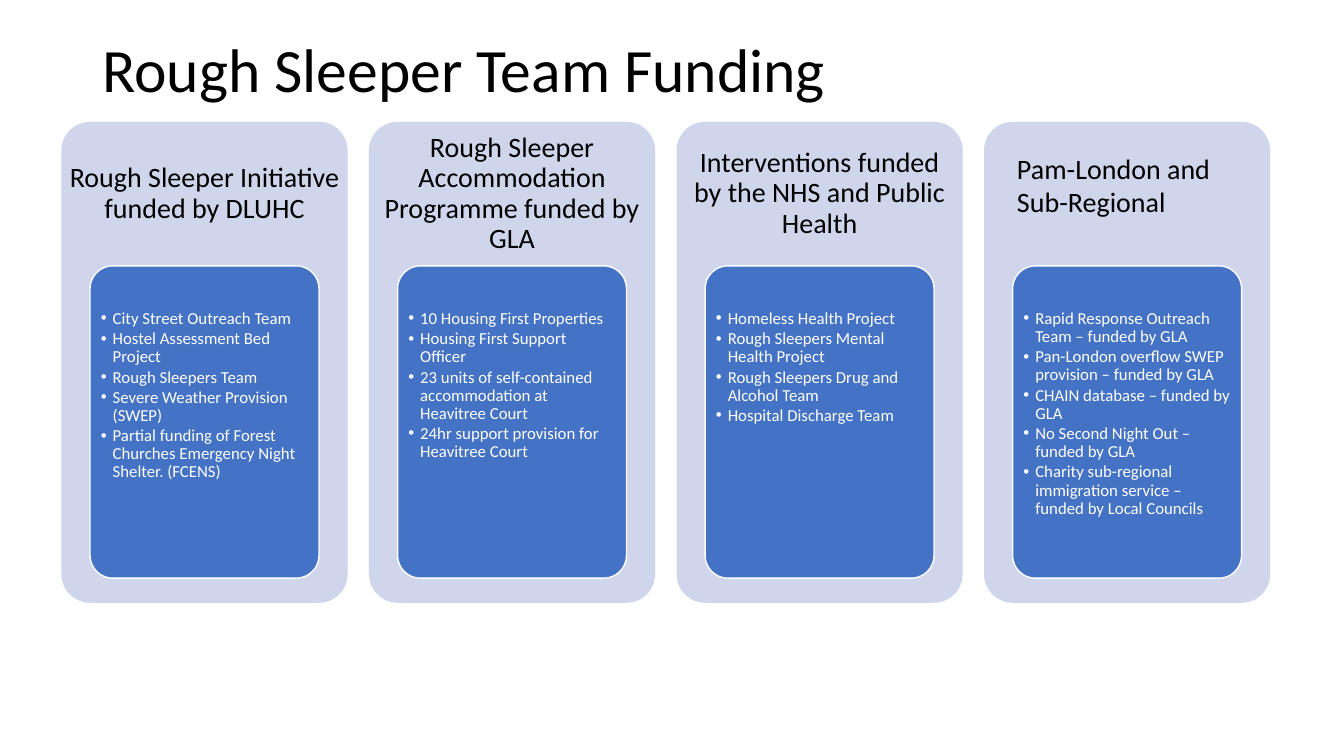
from lxml import etree
from pptx import Presentation
from pptx.dml.color import RGBColor
from pptx.enum.shapes import MSO_SHAPE
from pptx.enum.text import MSO_ANCHOR, MSO_AUTO_SIZE, PP_ALIGN
from pptx.oxml.ns import qn
from pptx.util import Cm, Pt

ROUNDED = MSO_SHAPE.ROUNDED_RECTANGLE
TOP, MIDDLE = MSO_ANCHOR.TOP, MSO_ANCHOR.MIDDLE
LEFT, CENTER = PP_ALIGN.LEFT, PP_ALIGN.CENTER
NO_FIT = MSO_AUTO_SIZE.NONE

COLORS = {"panel": "CFD5EA", "card": "4472C4", "white": "FFFFFF", "black": "000000"}
FONT = "Calibri"
COMPARISON_LAYOUT = 4

COLUMNS = [
    ("Rough Sleeper Initiative funded by DLUHC", [
        "City Street Outreach Team",
        "Hostel Assessment Bed Project",
        "Rough Sleepers Team",
        "Severe Weather Provision (SWEP)",
        "Partial funding of Forest Churches Emergency Night Shelter. (FCENS)",
    ]),
    ("Rough Sleeper Accommodation Programme funded by GLA", [
        "10 Housing First Properties",
        "Housing First Support Officer",
        "23 units of self-contained accommodation at Heavitree Court",
        "24hr support provision for Heavitree Court",
    ]),
    ("Interventions funded by the NHS and Public Health", [
        "Homeless Health Project",
        "Rough Sleepers Mental Health Project",
        "Rough Sleepers Drug and Alcohol Team",
        "Hospital Discharge Team",
    ]),
    ("Pam-London and Sub-Regional", [
        "Rapid Response Outreach Team – funded by GLA",
        "Pan-London overflow SWEP provision – funded by GLA",
        "CHAIN database – funded by GLA",
        "No Second Night Out – funded by GLA",
        "Charity sub-regional immigration service – funded by Local Councils",
    ]),
]


def rgb(name):
    return RGBColor.from_string(COLORS[name])


def place(sp, x, y, w, h):
    sp.left, sp.top, sp.width, sp.height = Cm(x), Cm(y), Cm(w), Cm(h)


def set_frame(tf, anchor, insets):
    tf.word_wrap = True
    tf.auto_size = NO_FIT
    tf.vertical_anchor = anchor
    tf.margin_left, tf.margin_top, tf.margin_right, tf.margin_bottom = map(Cm, insets)


def write(p, text, size, color, align=LEFT, spacing=0.9, after=0):
    p.alignment = align
    p.line_spacing = spacing
    p.space_before = Pt(0)
    p.space_after = Pt(after)
    r = p.add_run()
    r.text = text
    r.font.name = FONT
    r.font.size = Pt(size)
    r.font.bold = False
    r.font.color.rgb = rgb(color)


def add_bullet(p):
    pPr = p._p.get_or_add_pPr()
    pPr.set("marL", str(Cm(0.3)))
    pPr.set("indent", str(-Cm(0.3)))
    etree.SubElement(pPr, qn("a:buFont")).set("typeface", "Arial")
    etree.SubElement(pPr, qn("a:buChar")).set("char", "•")


def add_rounded(slide, x, y, w, h, fill):
    sp = slide.shapes.add_shape(ROUNDED, Cm(x), Cm(y), Cm(w), Cm(h))
    sp.adjustments[0] = 0.1
    sp.shadow.inherit = False
    sp.fill.solid()
    sp.fill.fore_color.rgb = rgb(fill)
    sp.line.fill.background()
    return sp


def fill_title(title, x, y, w, h):
    place(title, x, y, w, h)
    set_frame(title.text_frame, MIDDLE, (0.25, 0.13, 0.25, 0.13))
    write(title.text_frame.paragraphs[0], "Rough Sleeper Team Funding", 44, "black")


def add_heading(slide, text, x, y, w, h, anchor, insets, align, spacing):
    sp = slide.shapes.add_textbox(Cm(x), Cm(y), Cm(w), Cm(h))
    set_frame(sp.text_frame, anchor, insets)
    write(sp.text_frame.paragraphs[0], text, 20, "black", align, spacing)


def fill_list(slide, body, items, x, y, w, h):
    card = add_rounded(slide, x, y, w, h, "card")
    card.line.color.rgb = rgb("white")
    card.line.width = Pt(1)
    place(body, x + 0.17, y + 0.17, w - 0.34, h - 0.34)
    slide.shapes._spTree.append(body._element)
    tf = body.text_frame
    set_frame(tf, TOP, (0.1, 0.94, 0.1, 0.08))
    for i, item in enumerate(items):
        p = tf.add_paragraph() if i else tf.paragraphs[0]
        add_bullet(p)
        write(p, item, 12, "white", after=1.5)


def add_column(slide, body, heading, items, x, y, w, h, regional):
    add_rounded(slide, x, y, w, h, "panel")
    if regional:
        add_heading(slide, heading, x + 0.58, y + 0.61, 6.17, 1.96,
                    TOP, (0.25, 0.13, 0.25, 0.13), LEFT, 1.0)
    else:
        add_heading(slide, heading, x, y, w, 3.63, MIDDLE, (0.2,) * 4, CENTER, 0.9)
    fill_list(slide, body, items, x + 0.72, y + 3.63, w - 1.44, 7.87)


def main():
    prs = Presentation()
    prs.slide_width, prs.slide_height = Cm(33.87), Cm(19.05)
    slide = prs.slides.add_slide(prs.slide_layouts[COMPARISON_LAYOUT])
    fill_title(slide.shapes.title, 2.33, 0, 29.21, 3.68)
    bodies = list(slide.placeholders)[1:5]
    for i, (body, (heading, items)) in enumerate(zip(bodies, COLUMNS)):
        add_column(slide, body, heading, items, 1.55 + i * 7.75, 3.07, 7.21, 12.12,
                   regional=i == len(COLUMNS) - 1)
    prs.save("out.pptx")


if __name__ == "__main__":
    main()
